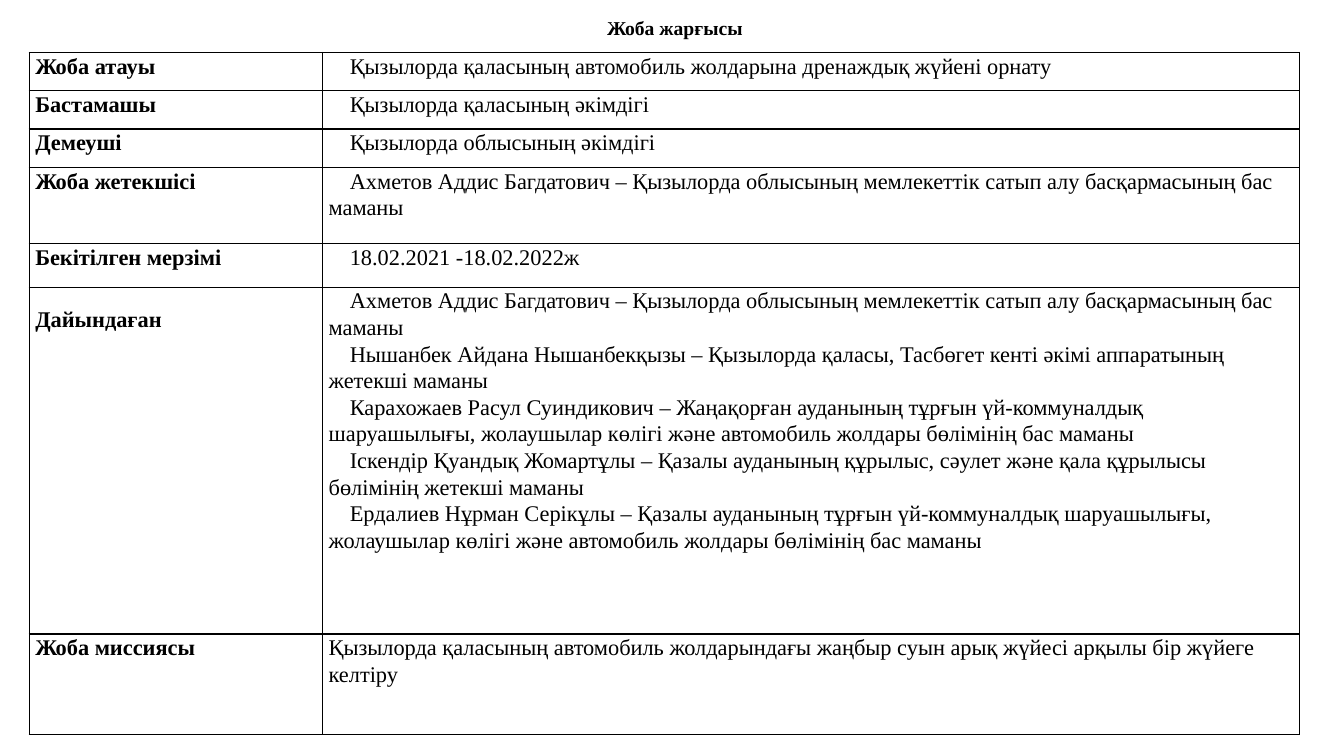
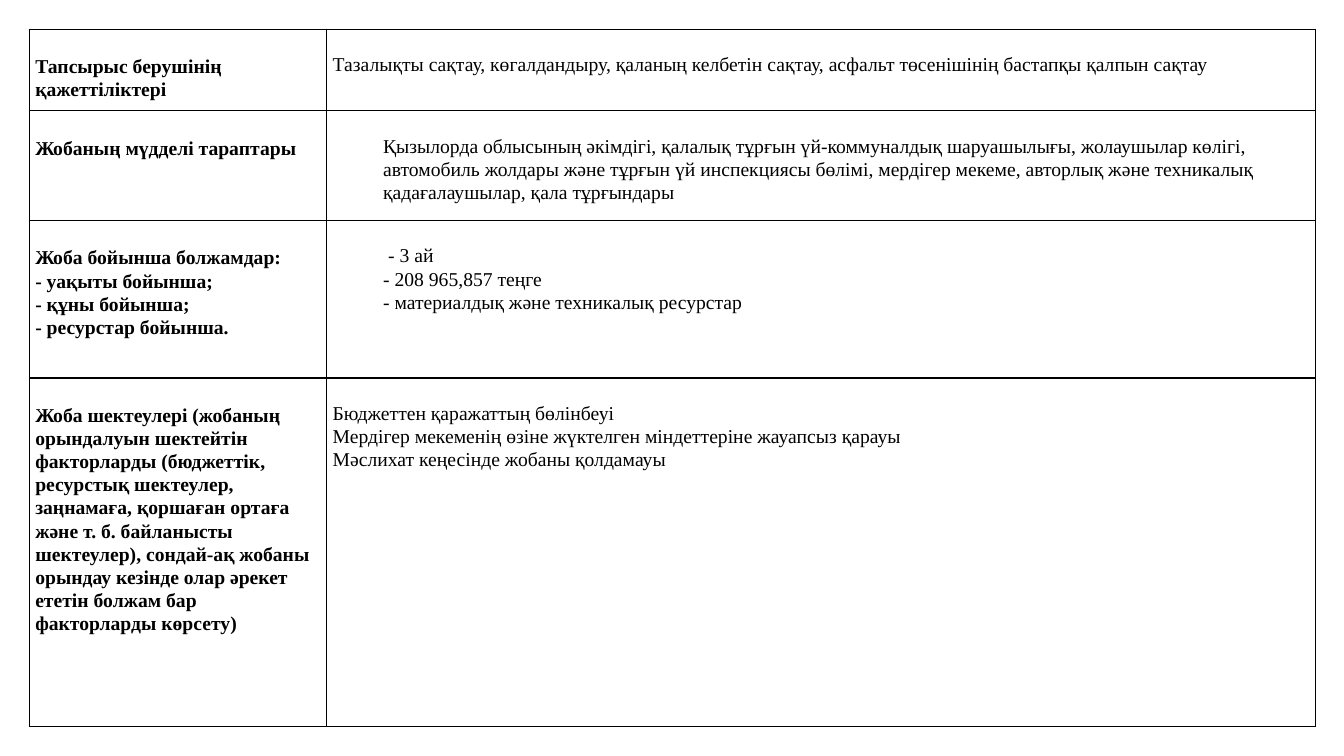
from lxml import etree
from pptx import Presentation
from pptx.dml.color import RGBColor
from pptx.enum.text import MSO_ANCHOR, PP_ALIGN
from pptx.oxml.ns import qn
from pptx.util import Pt

MIDDLE, CENTER = MSO_ANCHOR.MIDDLE, PP_ALIGN.CENTER

# Shared look: lengths in px, 100 px to the inch
PX = 9144
WIDTH, HEIGHT = 1333, 750
FONT, INK = "Times New Roman", "000000"
INSET, LINE_SPACING, BORDER_PT = 6, 1.07, 1
TITLE_PT, TITLE_BOX = 14, (3, 2, 1333, 50)

# Paragraph indents: (left margin, first line)
PLAIN, FIRST, BLOCK = (0, 0), (0, 21), (50, 0)
# Space above the text: (label, value)
TIGHT, LABEL_LOWER, LOWER = (0, 0), (18, 0), (25, 23)

LEADER = ("Ахметов Аддис Багдатович – Қызылорда облысының мемлекеттік сатып алу "
          "басқармасының бас маманы")

# Rows: height, space above, value indent, label lines, value lines
CHARTER = [
    (38, TIGHT, FIRST, ["Жоба атауы"],
     ["Қызылорда қаласының автомобиль жолдарына дренаждық жүйені орнату"]),
    (38, TIGHT, FIRST, ["Бастамашы"], ["Қызылорда қаласының әкімдігі"]),
    (38, TIGHT, FIRST, ["Демеуші"], ["Қызылорда облысының әкімдігі"]),
    (76, TIGHT, FIRST, ["Жоба жетекшісі"], [LEADER]),
    (43, TIGHT, FIRST, ["Бекітілген мерзімі"], ["18.02.2021 -18.02.2022ж"]),
    (344, LABEL_LOWER, FIRST, ["Дайындаған"], [
        LEADER,
        "Нышанбек Айдана Нышанбекқызы – Қызылорда қаласы, Тасбөгет кенті әкімі "
        "аппаратының жетекші маманы",
        "Карахожаев Расул Суиндикович – Жаңақорған ауданының тұрғын үй-коммуналдық "
        "шаруашылығы, жолаушылар көлігі және автомобиль жолдары бөлімінің бас маманы",
        "Іскендір Қуандық Жомартұлы – Қазалы ауданының құрылыс, сәулет және қала "
        "құрылысы бөлімінің жетекші маманы",
        "Ердалиев Нұрман Серікұлы – Қазалы ауданының тұрғын үй-коммуналдық "
        "шаруашылығы, жолаушылар көлігі және автомобиль жолдары бөлімінің бас маманы",
    ]),
    (100, TIGHT, PLAIN, ["Жоба миссиясы"],
     ["Қызылорда қаласының автомобиль жолдарындағы жаңбыр суын арық жүйесі арқылы "
      "бір жүйеге келтіру"]),
]
REQUIREMENTS = [
    (81, LOWER, PLAIN, ["Тапсырыс берушінің қажеттіліктері"],
     ["Тазалықты сақтау, көгалдандыру, қаланың келбетін сақтау, асфальт төсенішінің "
      "бастапқы қалпын сақтау"]),
    (109, LOWER, BLOCK, ["Жобаның мүдделі тараптары"],
     ["Қызылорда облысының әкімдігі, қалалық тұрғын үй-коммуналдық шаруашылығы, "
      "жолаушылар көлігі, автомобиль жолдары және тұрғын үй инспекциясы бөлімі, "
      "мердігер мекеме, авторлық және техникалық қадағалаушылар, қала тұрғындары"]),
    (156, LOWER, BLOCK,
     ["Жоба бойынша болжамдар:", "- уақыты бойынша;", "- құны бойынша;",
      "- ресурстар бойынша."],
     ["- 3 ай", "- 208 965,857 теңге", "- материалдық және техникалық ресурстар"]),
    (346, LOWER, PLAIN,
     ["Жоба шектеулері (жобаның орындалуын шектейтін факторларды (бюджеттік, "
      "ресурстық шектеулер, заңнамаға, қоршаған ортаға және т. б. байланысты "
      "шектеулер), сондай-ақ жобаны орындау кезінде олар әрекет ететін болжам бар "
      "факторларды көрсету)"],
     ["Бюджеттен қаражаттың бөлінбеуі",
      "Мердігер мекеменің өзіне жүктелген міндеттеріне жауапсыз қарауы",
      "Мәслихат кеңесінде жобаны қолдамауы"]),
]
SLIDES = [
    {"title": "Жоба жарғысы", "left": 29, "top": 52, "cols": (291, 969),
     "size": 16, "rows": CHARTER},
    {"title": None, "left": 29, "top": 29, "cols": (295, 981),
     "size": 14, "rows": REQUIREMENTS},
]


def px(*lengths):
    return [n * PX for n in lengths]


def rgb(value):
    return RGBColor.from_string(value)


def set_all(target, values):
    for name, value in values.items():
        setattr(target, name, value)


def add_run(p, text, size, bold):
    r = p.add_run()
    r.text = text
    set_all(r.font, {"name": FONT, "size": Pt(size), "bold": bold})
    r.font.color.rgb = rgb(INK)


def add_borders(cell):
    tc_pr = cell._tc.get_or_add_tcPr()
    for side in ("lnL", "lnR", "lnT", "lnB"):
        ln = etree.SubElement(tc_pr, qn("a:" + side), w=str(Pt(BORDER_PT)))
        fill = etree.SubElement(ln, qn("a:solidFill"))
        etree.SubElement(fill, qn("a:srgbClr"), val=INK)


def fill_cell(cell, lines, size, bold, space, indent):
    add_borders(cell)
    cell.fill.background()
    set_all(cell, {"margin_left": INSET * PX, "margin_right": INSET * PX,
                   "margin_top": space * PX, "margin_bottom": 0})
    tf = cell.text_frame
    left, first = px(*indent)
    for i, text in enumerate(lines):
        p = tf.add_paragraph() if i else tf.paragraphs[0]
        p.line_spacing = LINE_SPACING
        p_pr = p._p.get_or_add_pPr()
        p_pr.set("marL", str(left))
        # The duration line sits slightly further in
        p_pr.set("indent", str(5 * PX if text == "- 3 ай" else first))
        add_run(p, text, size, bold)


def add_title(slide, text):
    tf = slide.shapes.add_textbox(*px(*TITLE_BOX)).text_frame
    set_all(tf, {"word_wrap": False, "vertical_anchor": MIDDLE})
    p = tf.paragraphs[0]
    p.alignment = CENTER
    add_run(p, text, TITLE_PT, True)


def add_charter_table(slide, data):
    rows, cols = data["rows"], data["cols"]
    box = px(data["left"], data["top"], sum(cols), sum(row[0] for row in rows))
    table = slide.shapes.add_table(len(rows), len(cols), *box).table
    set_all(table, {"first_row": False, "horz_banding": False})
    for column, width in zip(table.columns, cols):
        column.width = width * PX
    for i, (height, spaces, indent, label, value) in enumerate(rows):
        table.rows[i].height = height * PX
        fill_cell(table.cell(i, 0), label, data["size"], True, spaces[0], PLAIN)
        fill_cell(table.cell(i, 1), value, data["size"], False, spaces[1], indent)


def main():
    prs = Presentation()
    prs.slide_width, prs.slide_height = px(WIDTH, HEIGHT)
    for data in SLIDES:
        s = prs.slides.add_slide(prs.slide_layouts[6])
        add_charter_table(s, data)
        if data["title"]:
            add_title(s, data["title"])
    prs.save("out.pptx")


if __name__ == "__main__":
    main()
